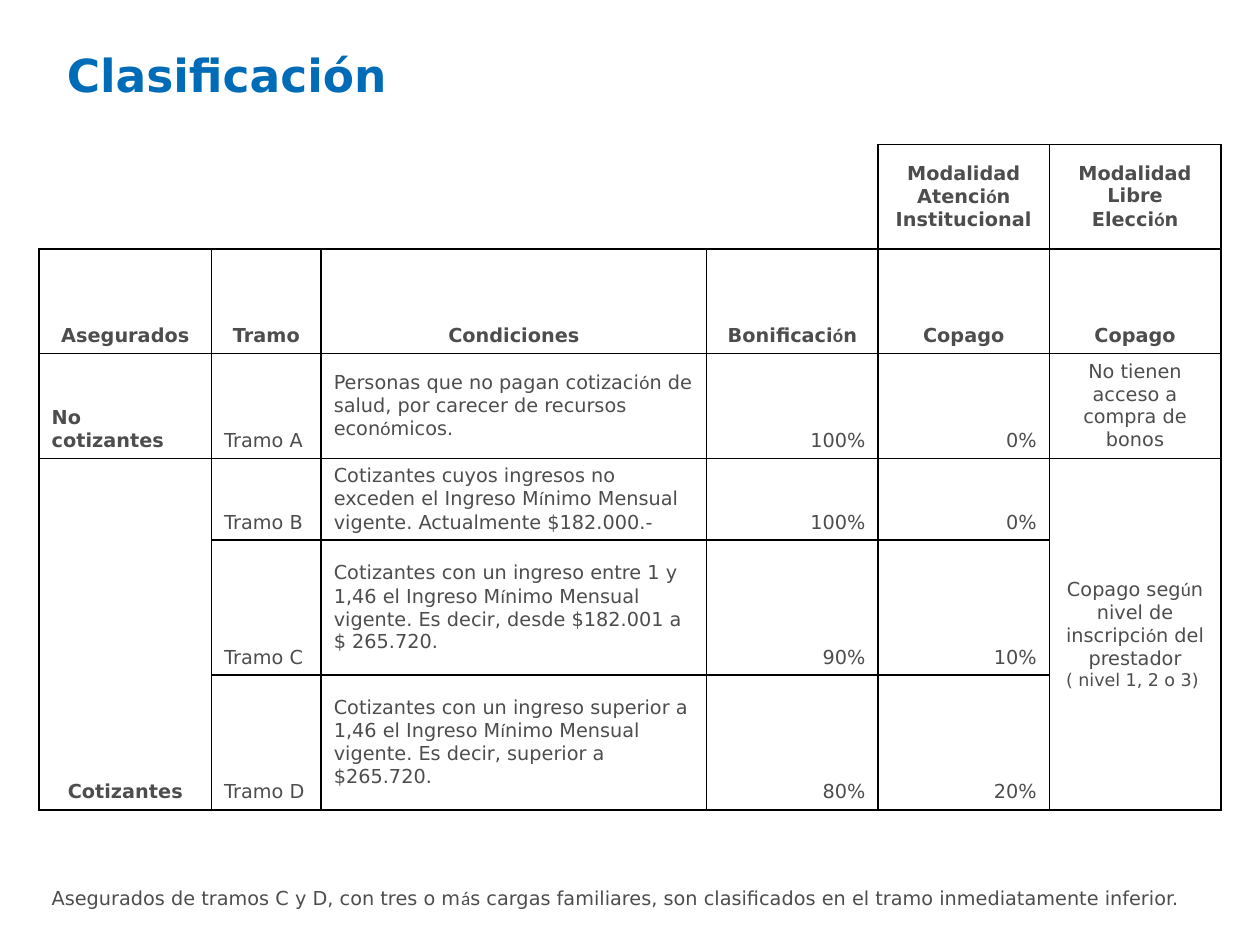
import itertools
from dataclasses import dataclass

import lxml.etree
import pptx
import pptx.dml.color
import pptx.enum.text
import pptx.oxml.ns
import pptx.util

Inches, Pt = pptx.util.Inches, pptx.util.Pt
Align = pptx.enum.text.PP_ALIGN
Anchor = pptx.enum.text.MSO_ANCHOR
PLAIN = "{2D5ABB26-0587-4C30-8999-92F81FD0307C}"


@dataclass(frozen=True)
class Theme:
    face: str = "DejaVu Sans"
    accent: str = "Calibri"
    head: str = "006CB7"
    text: str = "4D4D4D"
    line: str = "000000"
    title: float = 26
    body: float = 11
    small: float = 10
    rule: float = 1


@dataclass(frozen=True)
class Entry:
    row: int
    col: int
    text: str
    align: Align = Align.LEFT
    bold: bool = False
    anchor: Anchor = Anchor.BOTTOM
    rows: int = 1
    cols: int = 1


THEME = Theme()
WIDE, HIGH = 10, 7.5
COLS = [1.37, 0.87, 3.06, 1.36, 1.36, 1.36]
ROWS = [0.83, 0.83, 0.83, 0.65, 1.07, 1.07, 0.55, 0.3]
LEFT, TOP = 0.031 * WIDE, 0.153 * HIGH

HEADS = ["Asegurados", "Tramo", "Condiciones", "Bonificación", "Copago", "Copago"]
TIERS = [
    ("Tramo A", "Personas que no pagan cotización de salud, por carecer de "
     "recursos económicos.", "100%", "0%"),
    ("Tramo B", "Cotizantes cuyos ingresos no exceden el Ingreso Mínimo Mensual "
     "vigente. Actualmente $182.000.-", "100%", "0%"),
    ("Tramo C", "Cotizantes con un ingreso entre 1 y 1,46 el Ingreso Mínimo Mensual "
     "vigente. Es decir, desde $182.001 a $ 265.720.", "90%", "10%"),
    ("Tramo D", "Cotizantes con un ingreso superior a 1,46 el Ingreso Mínimo Mensual "
     "vigente. Es decir, superior a $265.720.", "80%", "20%"),
]


def entries() -> list[Entry]:
    mid, right, center = Anchor.MIDDLE, Align.RIGHT, Align.CENTER
    out = [
        Entry(0, 4, "Modalidad Atención Institucional", center, True, mid),
        Entry(0, 5, "Modalidad Libre Elección", center, True, mid),
        Entry(2, 0, "No cotizantes", bold=True),
        Entry(2, 5, "No tienen acceso a compra de bonos", center, anchor=mid),
        Entry(3, 0, "Cotizantes", center, True, rows=3),
        Entry(3, 5, "Copago según nivel de inscripción del prestador\n( nivel 1, 2 o 3) ",
              center, anchor=mid, rows=3),
        Entry(7, 0, "Asegurados de tramos C y D, con tres o más cargas familiares, "
              "son clasificados en el tramo inmediatamente inferior.", cols=6),
    ]
    out += [Entry(1, col, head, center, True) for col, head in enumerate(HEADS)]
    for row, (name, terms, bonus, share) in enumerate(TIERS, 2):
        out += [Entry(row, 1, name), Entry(row, 2, terms, anchor=mid),
                Entry(row, 3, bonus, right), Entry(row, 4, share, right)]
    return out


def style(font, face: str, size: float, color: str, bold: bool) -> None:
    font.name, font.size, font.bold = face, Pt(size), bold
    font.color.rgb = pptx.dml.color.RGBColor.from_string(color)


def write(cell, item: Entry) -> None:
    """Fill a cell, with accented letters in the accent face."""
    cell.vertical_anchor = item.anchor
    cell.text_frame.text = item.text
    for para in cell.text_frame.paragraphs:
        text = para.text
        size = THEME.small if text.startswith("(") else THEME.body
        para.clear()
        para.alignment = item.align
        for marked, part in itertools.groupby(text, lambda char: char in "áéíóú"):
            run = para.add_run()
            run.text = "".join(part)
            face = THEME.accent if marked else THEME.face
            style(run.font, face, size, THEME.text, item.bold)


def sides(row: int, col: int) -> str:
    """Name the ruled sides of a cell: Left, Right, Top, Bottom."""
    if row == 0 and col < 4:
        return "RB" if col == 3 else "B"
    if row < 6:
        return "LRTB"
    return "T" if row == 6 else ""


def border(cell, ruled: str) -> None:
    props = cell._tc.get_or_add_tcPr()
    tag = pptx.oxml.ns.qn
    for side in "LRTB":
        line = lxml.etree.SubElement(props, tag(f"a:ln{side}"), w=str(Pt(THEME.rule)))
        if side in ruled:
            fill = lxml.etree.SubElement(line, tag("a:solidFill"))
            lxml.etree.SubElement(fill, tag("a:srgbClr"), val=THEME.line)
        else:
            lxml.etree.SubElement(line, tag("a:noFill"))
    cell.fill.background()


def grid(slide) -> None:
    table = slide.shapes.add_table(
        len(ROWS), len(COLS), Inches(LEFT), Inches(TOP),
        Inches(sum(COLS)), Inches(sum(ROWS))).table
    table.first_row = table.horz_banding = False
    table._tbl.tblPr.find(pptx.oxml.ns.qn("a:tableStyleId")).text = PLAIN
    for col, width in zip(table.columns, COLS):
        col.width = Inches(width)
    for row, height in zip(table.rows, ROWS):
        row.height = Inches(height)
    for row, col in itertools.product(range(len(ROWS)), range(len(COLS))):
        border(table.cell(row, col), sides(row, col))
    for item in entries():
        cell = table.cell(item.row, item.col)
        if item.rows * item.cols > 1:
            cell.merge(table.cell(item.row + item.rows - 1, item.col + item.cols - 1))
        write(cell, item)


def title(slide, text: str) -> None:
    box = slide.shapes.title
    box.left, box.top = Inches(0.043 * WIDE), Inches(0.037 * HIGH)
    box.width, box.height = Inches(0.756 * WIDE), Inches(0.084 * HIGH)
    frame = box.text_frame
    frame.text = text
    frame.auto_size = pptx.enum.text.MSO_AUTO_SIZE.NONE
    frame.vertical_anchor = Anchor.MIDDLE
    para = frame.paragraphs[0]
    para.alignment = Align.LEFT
    style(para.runs[0].font, THEME.face, THEME.title, THEME.head, True)


def main() -> None:
    deck = pptx.Presentation()
    deck.slide_width, deck.slide_height = Inches(WIDE), Inches(HIGH)
    slide = deck.slides.add_slide(deck.slide_layouts.get_by_name("Title Only"))
    title(slide, "Clasificación")
    grid(slide)
    deck.save("out.pptx")


if __name__ == "__main__":
    main()
